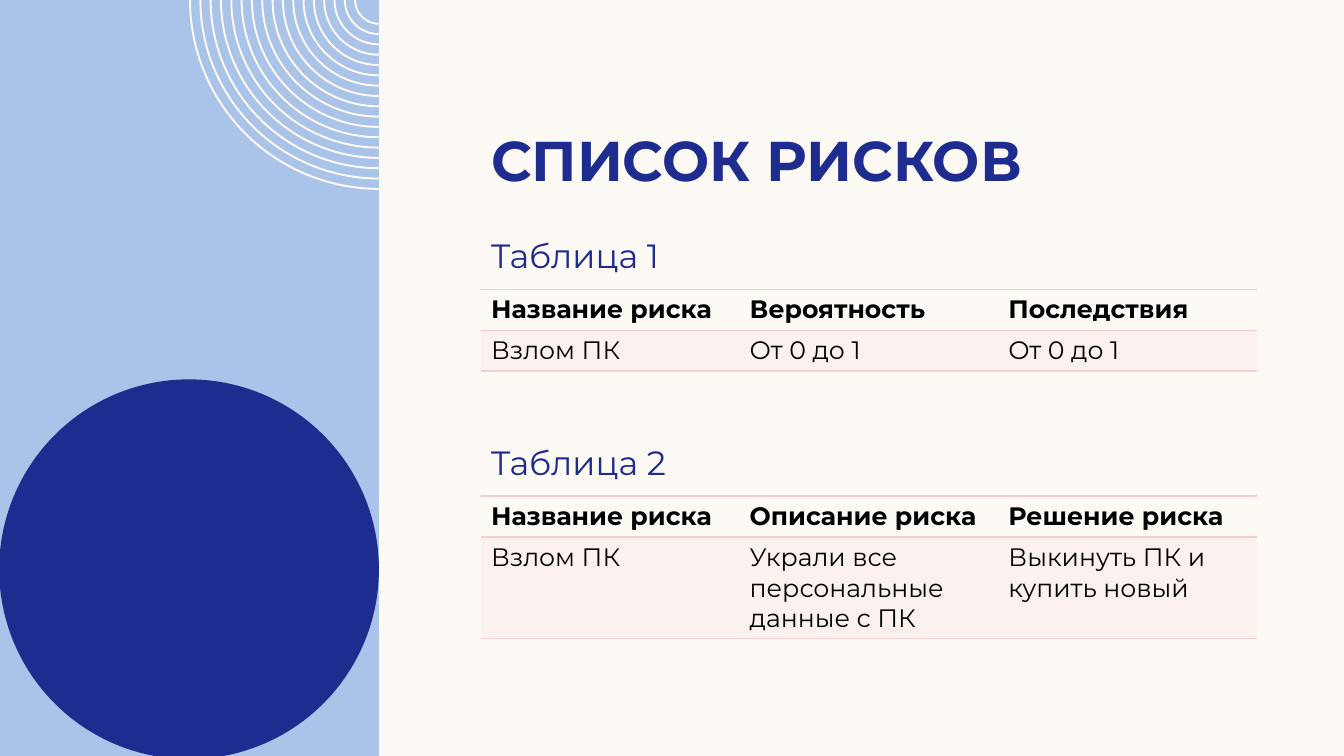
"""Build the risk list slide with two small tables."""
import lxml.etree
import pptx
import pptx.dml.color
import pptx.enum.shapes
import pptx.enum.text
import pptx.oxml.ns
import pptx.util

Cm = pptx.util.Cm
Pt = pptx.util.Pt
RGBColor = pptx.dml.color.RGBColor
MSO_SHAPE = pptx.enum.shapes.MSO_SHAPE
qn = pptx.oxml.ns.qn

CREAM = RGBColor(0xFD, 0xFA, 0xF6)
SKY = RGBColor(0xAA, 0xC3, 0xE8)
NAVY = RGBColor(0x1F, 0x2C, 0x8F)
PINK = RGBColor(0xF5, 0xCD, 0xCE)
BLACK = RGBColor(0, 0, 0)
FONT = "Montserrat"

PANEL_W = 9.55
LEFT = 12.12
COL_W = 6.52
CONTENT_W = 3 * COL_W
ROW_H = 1.03
CAPTION_H = 1.37

TABLES = [
    ("Таблица 1", 7.29, ROW_H, [
        ["Название риска", "Вероятность", "Последствия"],
        ["Взлом ПК", "От 0 до 1", "От 0 до 1"],
    ]),
    ("Таблица 2", 12.5, 2.55, [
        ["Название риска", "Описание риска", "Решение риска"],
        ["Взлом ПК", "Украли все персональные данные с ПК",
         "Выкинуть ПК и купить новый"],
    ]),
]


def add_run(p, text, size, color, bold=False):
    """Add one formatted run to a paragraph."""
    r = p.add_run()
    r.text = text
    r.font.name = FONT
    r.font.size = Pt(size)
    r.font.bold = bold
    r.font.color.rgb = color


def add_plain(slide, kind, left, top, width, height, color):
    """Add a preset shape in one colour."""
    sp = slide.shapes.add_shape(kind, Cm(left), Cm(top), Cm(width), Cm(height))
    sp.fill.solid()
    sp.fill.fore_color.rgb = color
    sp.line.fill.background()
    sp.shadow.inherit = False


def add_rings(slide, count=17, outer=4.76, step=0.26):
    """Add concentric quarter arcs as one freeform."""
    radii = [Cm(outer - i * step) for i in range(count)]
    edge = Cm(PANEL_W)
    builder = slide.shapes.build_freeform(edge - radii[0], 0)
    for i, radius in enumerate(radii):
        if i:
            builder.move_to(edge - radius, 0)
        builder.add_line_segments([(edge, radius)], close=False)
    sp = builder.convert_to_shape()
    for radius, segment in zip(radii, list(sp._element.iter(qn("a:lnTo")))):
        arc = lxml.etree.Element(qn("a:arcTo"), wR=str(radius), hR=str(radius),
                                 stAng="10800000", swAng="-5400000")
        segment.getparent().replace(segment, arc)
    sp.fill.background()
    sp.line.color.rgb = CREAM
    sp.line.width = Pt(1.4)
    sp.shadow.inherit = False


def set_title(slide, text):
    """Place and format the slide title."""
    sp = slide.shapes.title
    sp.left, sp.top = Cm(LEFT), Cm(2.54)
    sp.width, sp.height = Cm(CONTENT_W), Cm(2.31)
    tf = sp.text_frame
    tf.margin_top = tf.margin_bottom = 0
    tf.vertical_anchor = pptx.enum.text.MSO_ANCHOR.BOTTOM
    p = tf.paragraphs[0]
    p.alignment = pptx.enum.text.PP_ALIGN.LEFT
    add_run(p, text, 40, NAVY, True)


def add_caption(slide, text, top):
    """Add a table caption."""
    sp = slide.shapes.add_textbox(Cm(LEFT), Cm(top), Cm(CONTENT_W), Cm(CAPTION_H))
    tf = sp.text_frame
    tf.word_wrap = True
    tf.margin_top = tf.margin_bottom = 0
    add_run(tf.paragraphs[0], text, 24, NAVY)


def set_borders(cell):
    """Draw the top and bottom borders of a cell and hide the side ones."""
    tcPr = cell._tc.get_or_add_tcPr()
    for i, side in enumerate(("lnL", "lnR", "lnT", "lnB")):
        ln = lxml.etree.Element(qn("a:" + side), w=str(Pt(1)))
        if side in ("lnT", "lnB"):
            fill = lxml.etree.SubElement(ln, qn("a:solidFill"))
            lxml.etree.SubElement(fill, qn("a:srgbClr"), val=str(PINK))
        else:
            lxml.etree.SubElement(ln, qn("a:noFill"))
        tcPr.insert(i, ln)


def fill_cell(cell, is_header):
    """Leave a header cell clear and tint a body cell."""
    if is_header:
        cell.fill.background()
        return
    cell.fill.solid()
    cell.fill.fore_color.rgb = PINK
    clr = cell._tc.tcPr.find(qn("a:solidFill")).find(qn("a:srgbClr"))
    lxml.etree.SubElement(clr, qn("a:alpha"), val="20000")


def add_risk_table(slide, top, body_h, rows):
    """Add a table with a bold header row and a tinted body row."""
    frame = slide.shapes.add_table(len(rows), len(rows[0]), Cm(LEFT), Cm(top),
                                   Cm(CONTENT_W), Cm(ROW_H + body_h))
    table = frame.table
    table.horz_banding = False
    for col in table.columns:
        col.width = Cm(COL_W)
    for i, texts in enumerate(rows):
        is_header = i == 0
        table.rows[i].height = Cm(ROW_H if is_header else body_h)
        for j, text in enumerate(texts):
            cell = table.cell(i, j)
            add_run(cell.text_frame.paragraphs[0], text, 18, BLACK, is_header)
            fill_cell(cell, is_header)
            set_borders(cell)


def main():
    """Build and save the presentation."""
    prs = pptx.Presentation()
    prs.slide_width, prs.slide_height = Cm(33.87), Cm(19.05)
    slide = prs.slides.add_slide(prs.slide_layouts[5])
    slide.background.fill.solid()
    slide.background.fill.fore_color.rgb = CREAM
    add_plain(slide, MSO_SHAPE.RECTANGLE, 0, 0, PANEL_W, 19.05, SKY)
    add_rings(slide)
    add_plain(slide, MSO_SHAPE.OVAL, -0.02, 9.56, 9.57, 9.57, NAVY)
    set_title(slide, "СПИСОК РИСКОВ")
    for caption, top, body_h, rows in TABLES:
        add_caption(slide, caption, top - CAPTION_H)
        add_risk_table(slide, top, body_h, rows)
    prs.save("out.pptx")


if __name__ == "__main__":
    main()
